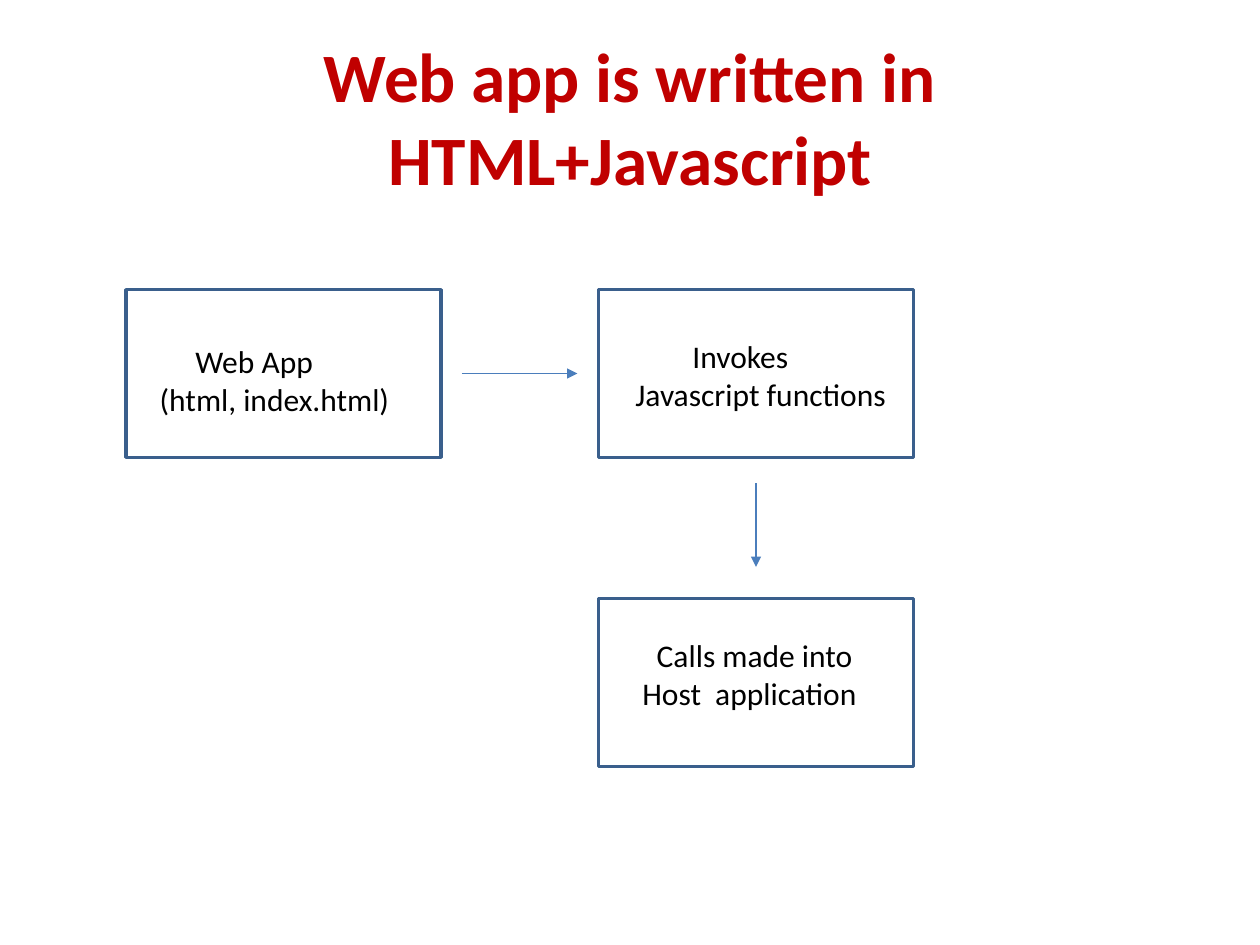
from lxml import etree
from pptx import Presentation, util as u
from pptx.dml.color import RGBColor
from pptx.enum import shapes, text
from pptx.oxml.ns import qn

COLORS = {"title": "C00000", "text": "000000", "outline": "3A5F8C", "arrow": "4B7EBC"}

deck = Presentation()
deck.slide_width, deck.slide_height = u.Cm(25.4), u.Cm(19.05)
page = deck.slides.add_slide(deck.slide_layouts[6])


def add_text(lines, left, top, width, height, size=18, color="text", bold=False,
             wrap=True, margin=0.25, align=text.PP_ALIGN.LEFT,
             anchor=text.MSO_ANCHOR.TOP):
    """Add a text box; lines holds (wording, left indent in cm) pairs."""
    box = page.shapes.add_textbox(u.Cm(left), u.Cm(top), u.Cm(width), u.Cm(height))
    frame = box.text_frame
    frame.word_wrap = wrap
    frame.vertical_anchor = anchor
    frame.margin_left = frame.margin_right = u.Cm(margin)
    for index, (wording, indent) in enumerate(lines):
        para = frame.paragraphs[0] if index == 0 else frame.add_paragraph()
        para.alignment = align
        if indent:
            para._p.get_or_add_pPr().set("marL", str(u.Cm(indent)))
        span = para.add_run()
        span.text = wording
        span.font.name = "Calibri"
        span.font.size = u.Pt(size)
        span.font.bold = bold
        span.font.color.rgb = RGBColor.from_string(COLORS[color])


# Title
add_text([("Web app is written in HTML+Javascript", 0)], 1.27, 0.76, 22.86, 3.18,
         size=39.6, color="title", bold=True, margin=0.5,
         align=text.PP_ALIGN.CENTER, anchor=text.MSO_ANCHOR.MIDDLE)

# Steps: box position, then label position, width, wrapping and lines
BOX_WIDTH, BOX_HEIGHT = 6.35, 3.38
steps = [
    (2.54, 5.84, 2.97, 6.78, 5.18, False,
     [("Web App", 0.72), ("(html, index.html)", 0)]),
    (12.07, 5.84, 12.27, 6.67, 5.92, True,
     [("Invokes", 1.44), ("Javascript functions", 0.29)]),
    (12.07, 12.07, 12.27, 12.7, 5.92, True,
     [("Calls made into", 0.72), ("Host  application", 0.43)]),
]
for left, top, label_left, label_top, label_width, wrap, lines in steps:
    box = page.shapes.add_shape(shapes.MSO_SHAPE.RECTANGLE, u.Cm(left), u.Cm(top),
                                u.Cm(BOX_WIDTH), u.Cm(BOX_HEIGHT))
    box.shadow.inherit = False
    box.fill.background()
    box.line.color.rgb = RGBColor.from_string(COLORS["outline"])
    box.line.width = u.Pt(2)
    add_text(lines, label_left, label_top, label_width, 1.8, wrap=wrap)

# Arrows between the steps, set apart from the boxes
for start_x, start_y, end_x, end_y in [(9.31, 7.53, 11.64, 7.53),
                                       (15.24, 9.74, 15.24, 11.43)]:
    arrow = page.shapes.add_connector(shapes.MSO_CONNECTOR.STRAIGHT, u.Cm(start_x),
                                      u.Cm(start_y), u.Cm(end_x), u.Cm(end_y))
    arrow.line.color.rgb = RGBColor.from_string(COLORS["arrow"])
    arrow.line.width = u.Pt(0.75)
    etree.SubElement(arrow.line._get_or_add_ln(), qn("a:tailEnd"), type="triangle")
    etree.SubElement(arrow._element.spPr, qn("a:effectLst"))

deck.save("out.pptx")
